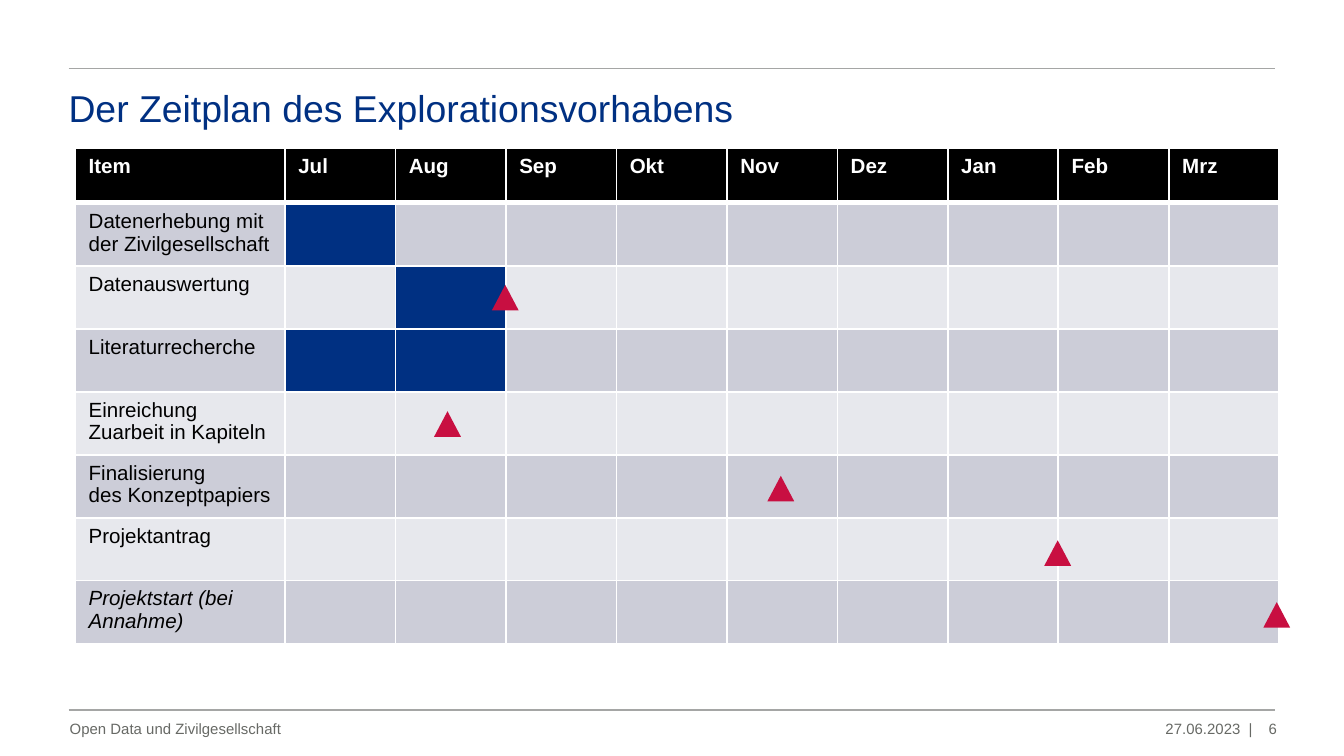
from lxml import etree
from pptx import Presentation
from pptx import util as u
from pptx.dml.color import RGBColor
from pptx.enum import shapes, text
from pptx.oxml.ns import qn

HUES = {"blue": "003082", "red": "C80F41", "rule": "A5A6A5", "gray": "676965",
        "black": "000000", "white": "FFFFFF", "dark": "CCCDD8", "light": "E7E8ED"}
MONTHS = ["Jul", "Aug", "Sep", "Okt", "Nov", "Dez", "Jan", "Feb", "Mrz"]
HARD = chr(160)
TASKS = [
    ("Datenerhebung mit der Zivilgesellschaft", [1]),
    ("Datenauswertung", [2]),
    ("Literaturrecherche", [1, 2]),
    ("Einreichung Zuarbeit in Kapiteln", []),
    (f"Finalisierung des{HARD}Konzeptpapiers", []),
    ("Projektantrag", []),
    ("Projektstart (bei Annahme)", []),
]
MARKS = [(3.23, 3.06), (5.71, 3.54), (7.77, 4.02), (9.4, 4.48), (3.66, 2.12)]


def hue(name):
    return RGBColor.from_string(HUES[name])


def write(frame, words, size=11, color="black", bold=False, slant=False, align="LEFT"):
    para = frame.paragraphs[0]
    para.alignment = getattr(text.PP_ALIGN, align)
    run = para.add_run()
    run.text = words
    font = run.font
    font.name, font.size = "Arial", u.Pt(size)
    font.bold, font.italic = bold, slant
    font.color.rgb = hue(color)


class Deck:
    """Holds the style and the current slide, and draws each kind of element."""

    def __init__(self, wide):
        self.show = Presentation()
        self.show.slide_width = u.Inches(wide)
        self.show.slide_height = u.Inches(wide * 9 / 16)
        self.slide = self.show.slides.add_slide(self.show.slide_layouts[6])

    def rule(self, left, right, top):
        line = self.slide.shapes.add_connector(
            shapes.MSO_CONNECTOR.STRAIGHT, *map(u.Inches, (left, top, right, top)))
        line.line.color.rgb = hue("rule")
        line.line.width = u.Pt(1)
        etree.SubElement(line._element.spPr, qn("a:effectLst"))

    def label(self, box, words, inset=0.1, anchor="MIDDLE", **style):
        frame = self.slide.shapes.add_textbox(*map(u.Inches, box)).text_frame
        frame.word_wrap = True
        frame.vertical_anchor = getattr(text.MSO_ANCHOR, anchor)
        frame.margin_left = frame.margin_right = u.Inches(inset)
        frame.margin_top = frame.margin_bottom = u.Inches(inset / 2)
        write(frame, words, **style)

    def cell(self, cell, fill, base=1):
        props = cell._tc.get_or_add_tcPr()
        for side, width in zip("LRTB", (1, 1, 1, base)):
            edge = etree.SubElement(props, qn("a:ln" + side), w=str(u.Pt(width)))
            solid = etree.SubElement(edge, qn("a:solidFill"))
            etree.SubElement(solid, qn("a:srgbClr"), val=HUES["white"])
        cell.fill.solid()
        cell.fill.fore_color.rgb = hue(fill)

    def plan(self, box, heads, tasks, first=1.56, top=0.41):
        table = self.slide.shapes.add_table(
            len(tasks) + 1, len(heads), *map(u.Inches, box)).table
        wide = (box[2] - first) / (len(heads) - 1)
        high = (box[3] - top) / len(tasks)
        for num, col in enumerate(table.columns):
            col.width = u.Inches(wide if num else first)
        for num, row in enumerate(table.rows):
            row.height = u.Inches(high if num else top)
        for num, head in enumerate(heads):
            cell = table.cell(0, num)
            self.cell(cell, "black", base=3)
            write(cell.text_frame, head, color="white", bold=True)
        for row, (name, busy) in enumerate(tasks, 1):
            band = "dark" if row % 2 else "light"
            for col in range(len(heads)):
                self.cell(table.cell(row, col), "blue" if col in busy else band)
            write(table.cell(row, 0).text_frame, name, slant=row == len(tasks))

    def mark(self, left, top):
        shape = self.slide.shapes.add_shape(
            shapes.MSO_SHAPE.ISOSCELES_TRIANGLE, *map(u.Inches, (left, top, 0.2, 0.19)))
        shape.shadow.inherit = False
        shape.fill.solid()
        shape.fill.fore_color.rgb = hue("red")
        shape.line.fill.background()


def main():
    deck = Deck(10)
    for top in (0.51, 5.28):
        deck.rule(0.51, 9.49, top)
    deck.label((0.51, 0.63, 8.98, 0.71), "Der Zeitplan des Explorationsvorhabens",
               inset=0, anchor="TOP", size=20, color="blue")
    foot = {"size": 8, "color": "gray"}
    deck.label((8.39, 5.27, 1.03, 0.3), "27.06.2023  |", align="RIGHT", **foot)
    deck.label((0.42, 5.27, 7.86, 0.3), "Open Data und Zivilgesellschaft", **foot)
    deck.label((9.13, 5.27, 0.47, 0.3), "6", align="RIGHT", **foot)
    deck.plan((0.56, 1.1, 8.96, 3.69), ["Item"] + MONTHS, TASKS)
    for spot in MARKS:
        deck.mark(*spot)
    deck.show.save("out.pptx")


if __name__ == "__main__":
    main()
